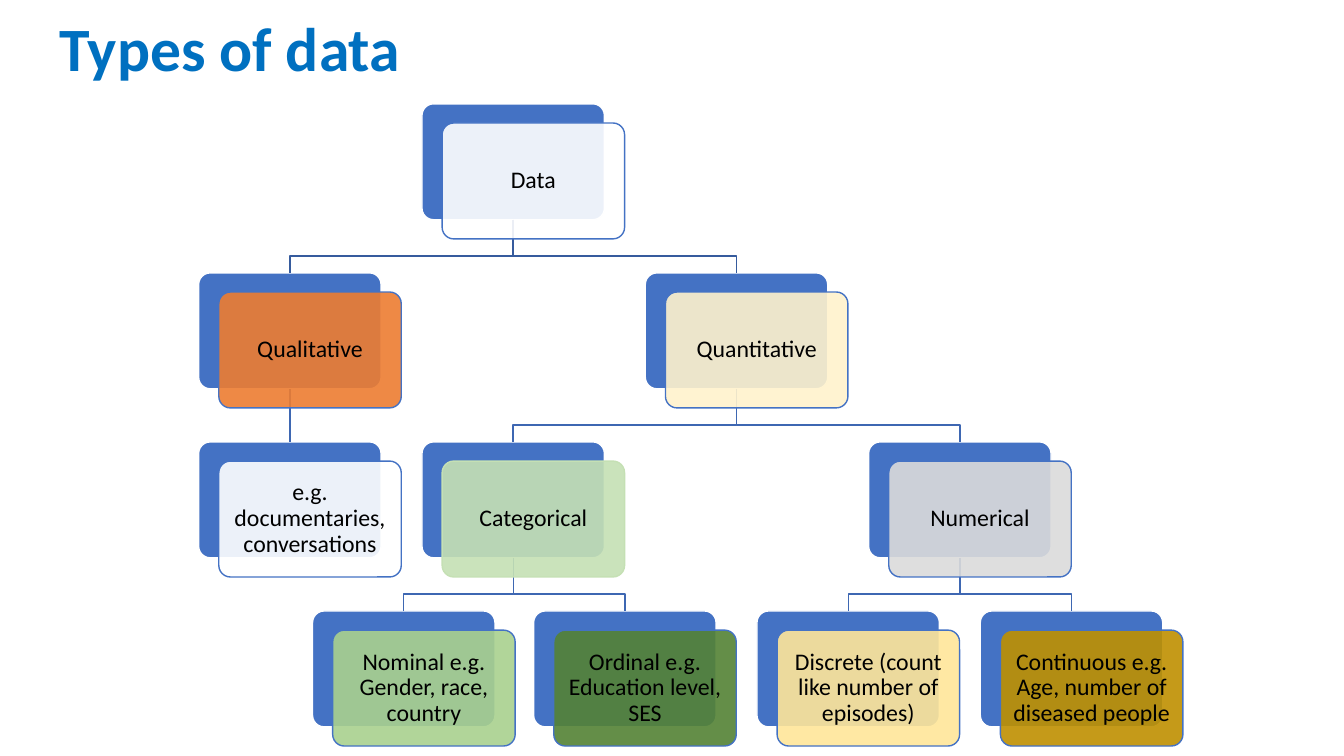
from lxml import etree
from pptx import Presentation
from pptx import util as u
from pptx.dml.color import RGBColor
from pptx.enum import shapes, text
from pptx.oxml.ns import qn

BLUE = RGBColor(0x44, 0x72, 0xC4)
TITLE_BLUE = RGBColor(0x00, 0x70, 0xC0)
LINE_DARK = RGBColor(0x36, 0x5B, 0x9D)
LINE_MID = RGBColor(0x3E, 0x67, 0xB2)
WHITE = RGBColor(0xFF, 0xFF, 0xFF)
BLACK = RGBColor(0x00, 0x00, 0x00)
ORANGE = RGBColor(0xED, 0x7D, 0x31)
CREAM = RGBColor(0xFF, 0xF2, 0xCC)
PALE_GREEN = RGBColor(0xC5, 0xE0, 0xB4)
GREEN = RGBColor(0xA9, 0xD1, 0x8E)
DARK_GREEN = RGBColor(0x54, 0x82, 0x35)
GREY = RGBColor(0xDB, 0xDB, 0xDB)
YELLOW = RGBColor(0xFF, 0xE6, 0x99)
GOLD = RGBColor(0xBF, 0x90, 0x00)

# Content: key -> (parent, column, row, wording, fill, outline)
TITLE = "Types of data"
NODES = {
    "data": (None, 1, 0, "Data", WHITE, BLUE),
    "qualitative": ("data", 0, 1, "Qualitative", ORANGE, BLUE),
    "examples": ("qualitative", 0, 2, "e.g. documentaries, conversations", WHITE, BLUE),
    "quantitative": ("data", 2, 1, "Quantitative", CREAM, BLUE),
    "categorical": ("quantitative", 1, 2, "Categorical", PALE_GREEN, PALE_GREEN),
    "nominal": ("categorical", 0.51, 3, "Nominal e.g. Gender, race, country", GREEN, BLUE),
    "ordinal": ("categorical", 1.5, 3, "Ordinal e.g. Education level, SES", DARK_GREEN, BLUE),
    "numerical": ("quantitative", 3, 2, "Numerical", GREY, BLUE),
    "discrete": ("numerical", 2.5, 3, "Discrete (count like number of episodes)", YELLOW, BLUE),
    "continuous": ("numerical", 3.5, 3, "Continuous e.g. Age, number of diseased people", GOLD, BLUE),
}

# Grid, in inches
LEFT, TOP = 1.97, 1.03
COLUMN, ROW = 2.215, 1.677
CARD_W, CARD_H = 1.81, 1.15
SHIFT_X, SHIFT_Y = 0.2, 0.19
BEND = 0.36
INSET = 0.07

deck = Presentation()
deck.slide_width, deck.slide_height = u.Inches(13.33), u.Inches(7.5)
page = deck.slides.add_slide(deck.slide_layouts[6])


def inches(*values):
    return [u.Inches(value) for value in values]


def corner(key):
    column, row = NODES[key][1:3]
    return LEFT + column * COLUMN, TOP + row * ROW


def add_card(x, y, fill, outline):
    card = page.shapes.add_shape(
        shapes.MSO_SHAPE.ROUNDED_RECTANGLE, *inches(x, y, CARD_W, CARD_H))
    card.adjustments[0] = 0.1
    card.shadow.inherit = False
    card.fill.solid()
    card.fill.fore_color.rgb = fill
    card.line.color.rgb = outline
    card.line.width = u.Pt(1)
    return card


def add_branch(parent, child, color):
    left, top = corner(parent)
    child_left, child_top = corner(child)
    x1, y1, x2, y2, bend = inches(
        left + CARD_W / 2, top + CARD_H,
        child_left + CARD_W / 2, child_top, top + CARD_H + BEND)
    if x1 == x2:
        branch = page.shapes.add_connector(
            shapes.MSO_CONNECTOR.STRAIGHT, x1, y1, x2, y2)
        branch.begin_connect(backs[parent], 2)
        branch.end_connect(backs[child], 0)
        etree.SubElement(branch._element.spPr, qn("a:effectLst"))
    else:
        elbow = page.shapes.build_freeform(x1, y1)
        elbow.add_line_segments([(x1, bend), (x2, bend), (x2, y2)], close=False)
        branch = elbow.convert_to_shape()
        branch.shadow.inherit = False
        branch.fill.background()
    branch.line.color.rgb = color
    branch.line.width = u.Pt(1)


def write(shape, wording, size, color, bold=False):
    frame = shape.text_frame
    frame.word_wrap = True
    frame.vertical_anchor = text.MSO_ANCHOR.MIDDLE
    para = frame.paragraphs[0]
    para.text = wording
    para.line_spacing = 0.9
    para.font.name = "Calibri"
    para.font.size = u.Pt(size)
    para.font.bold = bold
    para.font.color.rgb = color
    return frame, para


# Title
title = page.shapes.add_textbox(*inches(0.49, 0, 11.59, 1.03))
write(title, TITLE, 44, TITLE_BLUE, bold=True)

# Blue cards behind
backs = {key: add_card(*corner(key), BLUE, WHITE) for key in NODES}

# Branches
for key, (parent, *_) in NODES.items():
    if parent:
        add_branch(parent, key, LINE_DARK if parent == "data" else LINE_MID)

# Translucent labelled cards in front
for key, (_, _, _, wording, fill, outline) in NODES.items():
    x, y = corner(key)
    front = add_card(x + SHIFT_X, y + SHIFT_Y, fill, outline)
    tint = front._element.spPr.find(qn("a:solidFill"))[0]
    etree.SubElement(tint, qn("a:alpha"), val="90000")
    frame, para = write(front, wording, 17, BLACK)
    para.alignment = text.PP_ALIGN.CENTER
    frame.margin_left = frame.margin_right = u.Inches(INSET)
    frame.margin_top = frame.margin_bottom = u.Inches(INSET)

deck.save("out.pptx")
